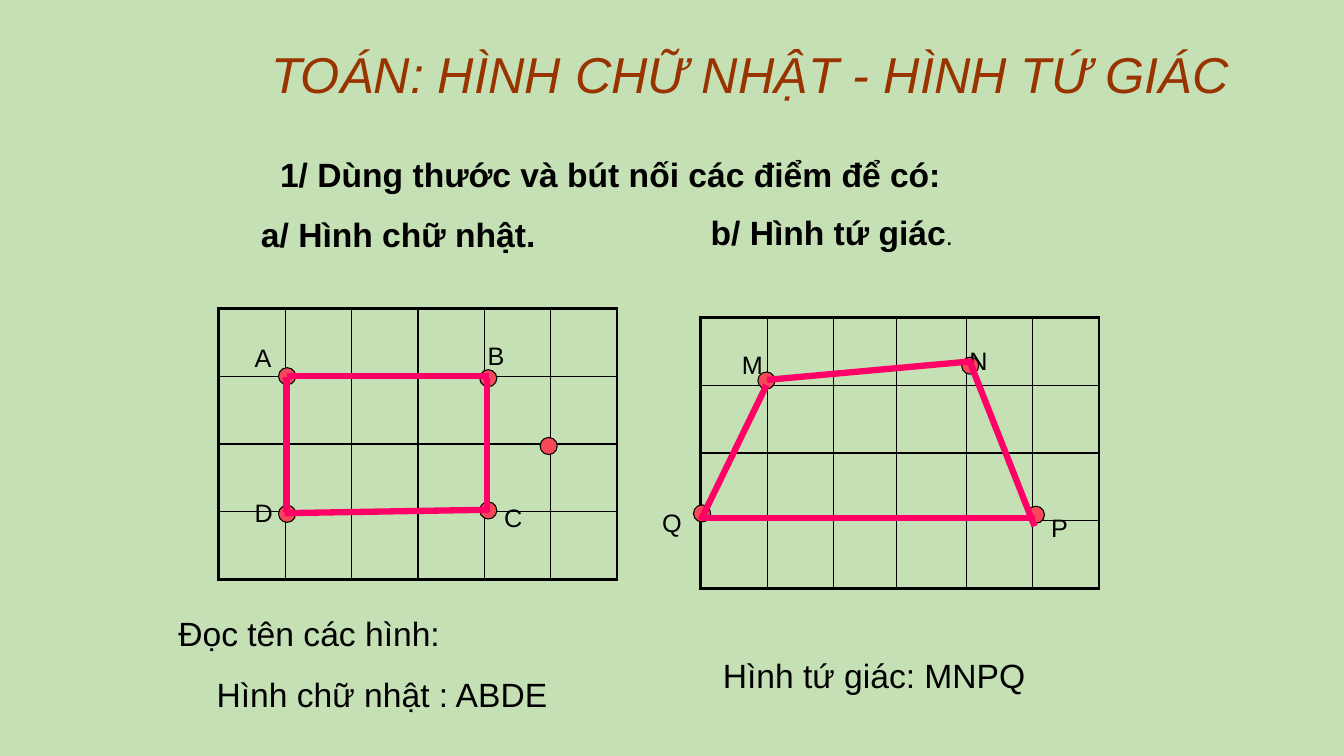
import pptx
import pptx.util
import pptx.dml.color
import pptx.enum.shapes
import pptx.oxml
from lxml import etree

RGB = pptx.dml.color.RGBColor
GREEN = RGB(0xC5, 0xE0, 0xB4)
BLACK = RGB(0, 0, 0)
BROWN = RGB(0x99, 0x33, 0x00)
ORANGE = RGB(0xFF, 0x66, 0x00)
RED = RGB(0xF5, 0x49, 0x59)
PINK = RGB(0xFF, 0x00, 0x66)
NS = "http://schemas.openxmlformats.org/drawingml/2006/main"

# Content: left, top, width, height in inches; runs of text, size, bold
TITLE = "TOÁN: HÌNH CHỮ NHẬT - HÌNH TỨ GIÁC"
LINES = [
    (2.68, 1.48, 6.83, 0.5, [("1/ Dùng thước và bút nối các điểm để có:", 24, True)]),
    (2.49, 2.07, 3.76, 0.5, [("a/ Hình chữ nhật.", 24, True)]),
    (6.95, 2.05, 3.93, 0.5, [("b/ Hình tứ giác", 24, True), (".", 18, False)]),
    (1.67, 6.03, 3.22, 0.5, [("Đọc tên các hình:", 24, False)]),
    (2.05, 6.64, 4.39, 0.5, [("Hình chữ nhật : ABDE", 24, False)]),
    (7.07, 6.45, 3.91, 0.5, [("Hình tứ giác: MNPQ", 24, False)]),
]

# Figures: everything but the origin is counted in columns and rows
CELL_W, CELL_H, ROWS = 3.95 / 6, 2.69 / 4, 4
FIGURES = [
    {
        "origin": (2.17, 3.06),
        "cols": [1, 1, 1, 1, 1, 1],
        "dots": [(1.03, 1), (4.06, 1.03), (4.06, 2.98), (1.03, 3.03), (4.97, 2.03)],
        "names": {"A": (0.39, 0.43), "B": (3.9, 0.39), "C": (4.15, 2.78), "D": (0.39, 2.71)},
        "edges": [((1.03, 1), (4.07, 1)), ((4.04, 1.03), (4.04, 3)),
                  ((4.07, 2.97), (0.99, 3.02)), ((1.02, 3), (1.02, 1.01))],
    },
    {
        "origin": (6.95, 3.15),
        "cols": [1, 1, 0.95, 1.05, 1, 1],
        "dots": [(0.99, 0.93), (4.06, 0.71), (5.05, 2.91), (0.02, 2.89)],
        "names": {"M": (0.47, 0.39), "N": (3.9, 0.33), "P": (5.13, 2.8), "Q": (-0.73, 2.72)},
        "edges": [((1, 0.92), (4.04, 0.65)), ((4.04, 0.62), (5.03, 3.08)),
                  ((5.03, 2.96), (0.03, 2.96)), ((0.99, 1), (0, 2.99))],
    },
]
DOT = 0.17

deck = pptx.Presentation()
inch = pptx.util.Inches
deck.slide_width, deck.slide_height = inch(13.33), inch(7.5)
slide = deck.slides.add_slide(deck.slide_layouts[6])
slide.background.fill.solid()
slide.background.fill.fore_color.rgb = GREEN
shapes = slide.shapes


def add_line(host, tag, color, width):
    """Put a solid line element under a host element."""
    line = etree.SubElement(host, f"{{{NS}}}{tag}", w=str(pptx.util.Pt(width)))
    fill = etree.SubElement(line, f"{{{NS}}}solidFill")
    etree.SubElement(fill, f"{{{NS}}}srgbClr", val=str(color))


def add_text(x, y, w, h, runs, color=BLACK):
    box = shapes.add_textbox(inch(x), inch(y), inch(w), inch(h))
    box.text_frame.word_wrap = True
    made = []
    for text, size, bold in runs:
        run = box.text_frame.paragraphs[0].add_run()
        run.text = text
        font = run.font
        font.name, font.size, font.bold = "Arial", pptx.util.Pt(size), bold
        font.color.rgb = color
        made.append(run)
    return made


def add_grid(x, y, cols):
    frame = shapes.add_table(ROWS, len(cols), inch(x), inch(y),
                             inch(CELL_W * sum(cols)), inch(CELL_H * ROWS))
    table = frame.table
    for col, share in zip(table.columns, cols):
        col.width = inch(CELL_W * share)
    last = len(cols) - 1
    for r, row in enumerate(table.rows):
        row.height = inch(CELL_H)
        for c, cell in enumerate(row.cells):
            rim = {"lnL": c == 0, "lnR": c == last, "lnT": r == 0, "lnB": r == ROWS - 1}
            host = cell._tc.get_or_add_tcPr()
            for tag, outer in rim.items():
                add_line(host, tag, BLACK, 2.25 if outer else 1)
            cell.fill.background()


def add_dot(x, y):
    dot = shapes.add_shape(pptx.enum.shapes.MSO_SHAPE.OVAL, inch(x - DOT / 2),
                           inch(y - DOT / 2), inch(DOT), inch(DOT))
    dot.shadow.inherit = False
    dot.fill.solid()
    dot.fill.fore_color.rgb = RED
    dot.line.color.rgb = BLACK
    dot.line.width = pptx.util.Pt(0.75)


def add_edge(start, end):
    edge = shapes.add_connector(pptx.enum.shapes.MSO_CONNECTOR.STRAIGHT,
                                *[inch(v) for v in start + end])
    edge.line.color.rgb = PINK
    edge.line.width = pptx.util.Pt(4.5)
    etree.SubElement(edge._element.spPr, f"{{{NS}}}effectLst")


# Question and answers
for line in LINES:
    add_text(*line)

# Grids with dots, names and drawn edges
for fig in FIGURES:
    left, top = fig["origin"]

    def spot(point):
        return left + point[0] * CELL_W, top + point[1] * CELL_H

    add_grid(left, top, fig["cols"])
    for point in fig["dots"]:
        add_dot(*spot(point))
    for name, point in fig["names"].items():
        add_text(*spot(point), 0.5, 0.4, [(name, 18, False)])
    for start, end in fig["edges"]:
        add_edge(spot(start), spot(end))

# Title with a thin outline, in a box wide enough for one line
head = add_text(2.59, 0.38, 10.2, 0.68, [(TITLE, 36, False)], BROWN)[0]
head.font.italic = True
props = head.font._element
add_line(props, "ln", ORANGE, 0.75)
props.insert(0, props[-1])

deck.save("out.pptx")
